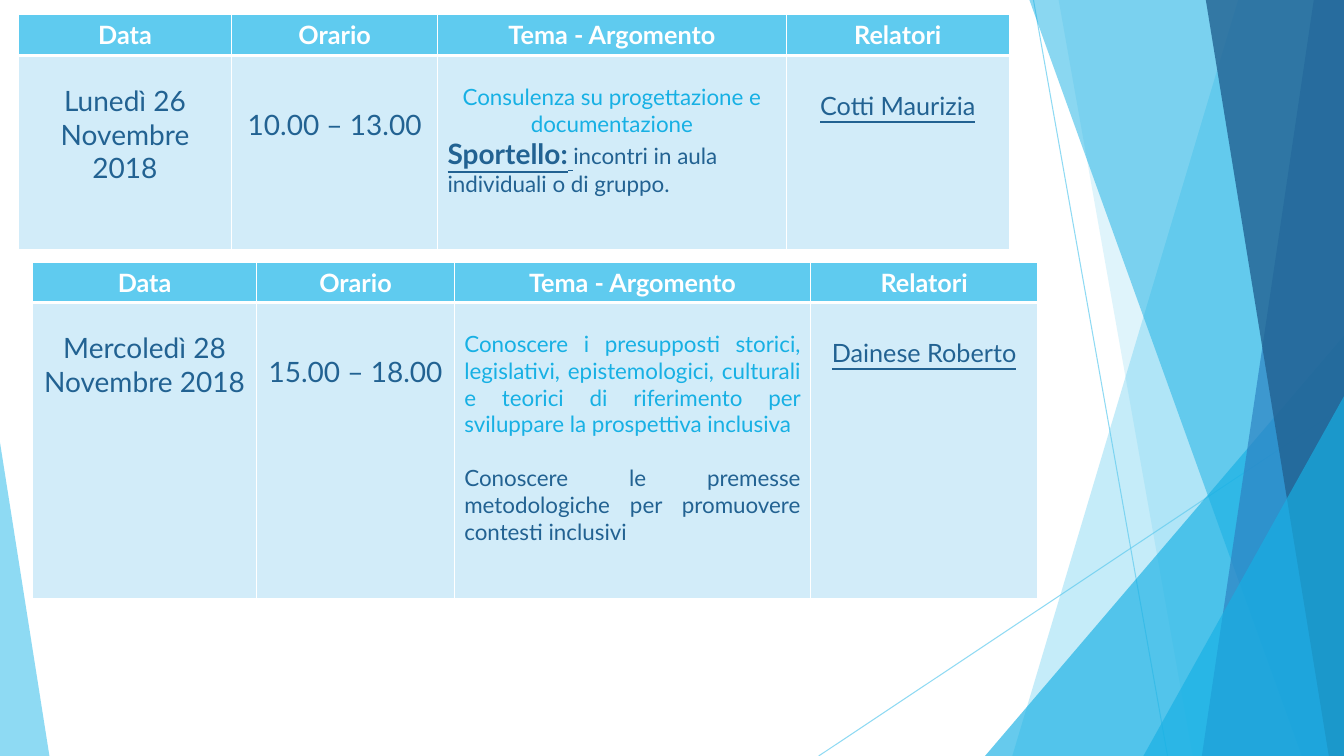
from collections import namedtuple
from dataclasses import dataclass

from lxml import etree
from pptx import Presentation
from pptx.dml.color import RGBColor
from pptx.enum.shapes import MSO_CONNECTOR, MSO_SHAPE
from pptx.enum.text import PP_ALIGN
from pptx.oxml.ns import qn
from pptx.util import Inches, Pt

TRIANGLE = MSO_SHAPE.ISOSCELES_TRIANGLE
STRAIGHT = MSO_CONNECTOR.STRAIGHT
LEFT, CENTER, JUSTIFY = PP_ALIGN.LEFT, PP_ALIGN.CENTER, PP_ALIGN.JUSTIFY

Box = namedtuple("Box", "left top width height")
Span = namedtuple("Span", "text format")
Para = namedtuple("Para", "align spans before", defaults=(0,))
Cell = namedtuple("Cell", "top_margin paras")


@dataclass(frozen=True)
class Theme:
    """Colours, font and type sizes of the slide."""
    sky: str = "5FCBEF"
    cyan: str = "17B0E4"
    blue: str = "2E83C3"
    navy: str = "226292"
    pale: str = "D2ECF9"
    white: str = "FFFFFF"
    font: str = "Lato"
    large: int = 20
    medium: int = 18
    small: int = 16
    hairline: float = 0.75
    border: int = 1
    header_border: int = 3


THEME = Theme()
SLIDE = Box(0, 0, 13.33, 7.5)
HEADINGS = ("Data", "Orario", "Tema - Argomento", "Relatori")
ONE_LINE, TWO_LINES, NAME_LINE = 0.28, 0.52, 0.35

HEADING = dict(size=THEME.medium, color=THEME.white, bold=True)
PLAIN = dict(size=THEME.large, color=THEME.navy, bold=False)
TOPIC = dict(size=THEME.small, color=THEME.cyan, bold=False)
DETAIL = dict(TOPIC, color=THEME.navy)
LABEL = dict(PLAIN, bold=True, underline=True)
SPEAKER = dict(PLAIN, size=THEME.medium, underline=True)


def set_opacity(element, percent):
    """Make every plain colour inside the element partly transparent."""
    for color in element.iter(qn("a:srgbClr")):
        etree.SubElement(color, qn("a:alpha"), val=str(percent * 1000))


def paint(shape, color, percent):
    """Fill a shape with a see-through colour and no outline."""
    shape.shadow.inherit = False
    shape.fill.solid()
    shape.fill.fore_color.rgb = RGBColor.from_string(color)
    shape.line.fill.background()
    set_opacity(shape.element, percent)


def add_ray(page, start, end):
    """Draw one thin line between two points."""
    ray = page.shapes.add_connector(STRAIGHT, *map(Inches, (*start, *end)))
    ray.line.color.rgb = RGBColor.from_string(THEME.sky)
    ray.line.width = Pt(THEME.hairline)
    set_opacity(ray.element, 70)
    etree.SubElement(ray.element.spPr, qn("a:effectLst"))


def add_pane(page, box, top_x, bottom_x, color, percent):
    """Draw a pane from a slanted left edge to the right side of the box."""
    right, bottom = box.left + box.width, box.top + box.height
    outline = page.shapes.build_freeform(Inches(top_x), Inches(box.top), 1.0)
    corners = ((right, box.top), (right, bottom), (bottom_x, bottom))
    outline.add_line_segments([(Inches(x), Inches(y)) for x, y in corners])
    paint(outline.convert_to_shape(), color, percent)


def add_wedge(page, box, width, height, peak, color, percent):
    """Draw a right triangle in a lower corner, peak 0 for left and 1 for right."""
    left = box.left + (box.width - width) * peak
    place = (left, box.top + box.height - height, width, height)
    wedge = page.shapes.add_shape(TRIANGLE, *map(Inches, place))
    wedge.adjustments[0] = peak
    paint(wedge, color, percent)


def add_decoration(page, box):
    """Draw the layered rays, panes and wedges along the slide edges."""
    right, bottom = box.left + box.width, box.top + box.height
    add_ray(page, (10.25, box.top), (11.58, bottom))
    add_ray(page, (right, 4.03), (8.12, bottom))
    add_pane(page, box, 12.28, 10.04, THEME.sky, 36)
    add_pane(page, box, 10.5, 11.83, THEME.sky, 20)
    add_wedge(page, box, 3.56, 4.17, 1, THEME.cyan, 66)
    add_pane(page, box, 10.21, 12.91, THEME.cyan, 50)
    add_pane(page, box, 13.03, 11.92, THEME.blue, 70)
    add_pane(page, box, 11.96, 13.18, THEME.navy, 80)
    add_wedge(page, box, 1.99, 3.57, 1, THEME.cyan, 66)
    add_wedge(page, box, 0.49, 3.11, 0, THEME.sky, 70)


def write_span(paragraph, span):
    """Add one formatted run to a paragraph."""
    run = paragraph.add_run()
    run.text = span.text
    run.font.name = THEME.font
    run.font.size = Pt(span.format["size"])
    run.font.color.rgb = RGBColor.from_string(span.format["color"])
    for name in ("bold", "underline"):
        setattr(run.font, name, span.format.get(name, False))


def fill_cell(cell, content, color, bottom_border):
    """Give a table cell its borders, fill and text."""
    properties = cell._tc.get_or_add_tcPr()
    for side in "LRTB":
        width = bottom_border if side == "B" else THEME.border
        line = etree.SubElement(properties, qn(f"a:ln{side}"), w=str(Pt(width)))
        solid = etree.SubElement(line, qn("a:solidFill"))
        etree.SubElement(solid, qn("a:srgbClr"), val=THEME.white)
    cell.fill.solid()
    cell.fill.fore_color.rgb = RGBColor.from_string(color)
    cell.margin_top = Inches(content.top_margin)
    frame = cell.text_frame
    for index, para in enumerate(content.paras):
        paragraph = frame.add_paragraph() if index else frame.paragraphs[0]
        paragraph.alignment = para.align
        paragraph.space_before = Pt(para.before)
        for span in para.spans:
            write_span(paragraph, span)


def centered(text, style):
    """Return a centred paragraph of one span."""
    return Para(CENTER, [Span(text, style)])


def add_schedule(page, box, columns, header_height, dates, time, topics, speaker):
    """Draw a two-row timetable whose columns share the width of the box."""
    table = page.shapes.add_table(2, len(columns), *map(Inches, box)).table
    table.horz_banding = False
    for column, share in zip(table.columns, columns):
        column.width = Inches(box.width * share / sum(columns))
    table.rows[0].height = Inches(header_height)
    table.rows[1].height = Inches(box.height - header_height)
    headings = [Cell(0.05, [centered(text, HEADING)]) for text in HEADINGS]
    session = [
        Cell(ONE_LINE, [centered(text, PLAIN) for text in dates]),
        Cell(TWO_LINES, [centered(time, PLAIN)]),
        Cell(ONE_LINE, topics),
        Cell(NAME_LINE, [centered(speaker, SPEAKER)]),
    ]
    for index in range(len(columns)):
        fill_cell(table.cell(0, index), headings[index], THEME.sky, THEME.header_border)
        fill_cell(table.cell(1, index), session[index], THEME.pale, THEME.border)


def main():
    """Build and save the slide."""
    deck = Presentation()
    deck.slide_width, deck.slide_height = Inches(SLIDE.width), Inches(SLIDE.height)
    page = deck.slides.add_slide(deck.slide_layouts[6])
    add_decoration(page, SLIDE)
    add_schedule(
        page, Box(0.18, 0.14, 9.83, 2.34), (2.12, 2.04, 3.46, 2.21), 0.41,
        ("Lunedì 26", "Novembre 2018"), "10.00 – 13.00",
        [centered("Consulenza su progettazione e documentazione", TOPIC),
         Para(LEFT, [Span("Sportello:", LABEL),
                     Span(" ", dict(LABEL, size=THEME.small)),
                     Span("incontri in aula individuali o di gruppo.", DETAIL)])],
        "Cotti Maurizia")
    add_schedule(
        page, Box(0.32, 2.6, 9.97, 3.34), (2.23, 1.96, 3.54, 2.25), 0.4,
        ("Mercoledì 28", "Novembre 2018"), "15.00 – 18.00",
        [Para(JUSTIFY, [Span("Conoscere i presupposti storici, legislativi, "
                             "epistemologici, culturali e teorici di riferimento "
                             "per sviluppare la prospettiva inclusiva", TOPIC)]),
         Para(JUSTIFY, [Span("Conoscere le premesse metodologiche per promuovere "
                             "contesti inclusivi", DETAIL)], 19.2)],
        "Dainese Roberto")
    deck.save("out.pptx")


if __name__ == "__main__":
    main()
